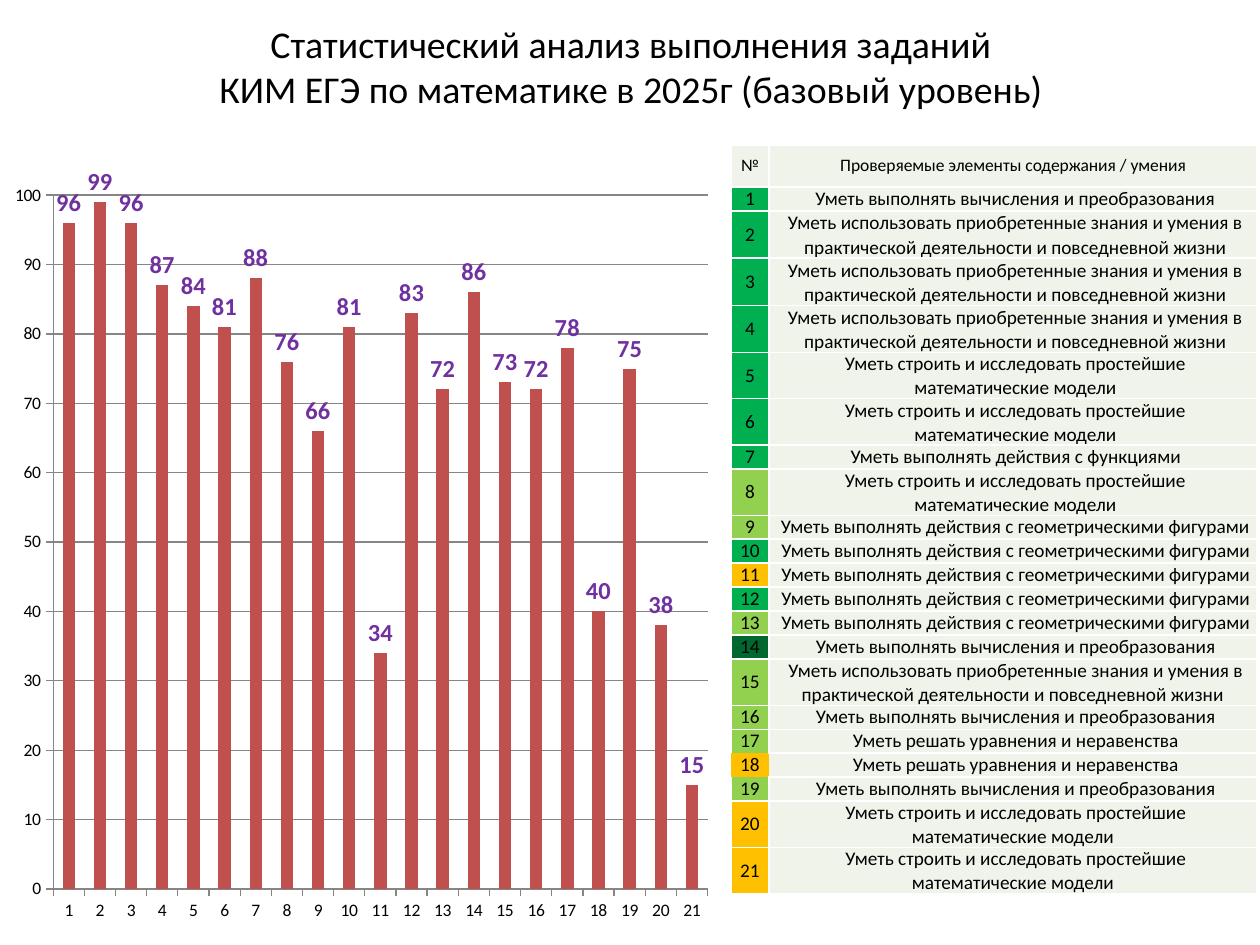
import pptx
import pptx.chart.data
import pptx.dml.color
import pptx.enum.chart
import pptx.enum.text
import pptx.oxml
import pptx.oxml.ns
import pptx.util

RGBColor = pptx.dml.color.RGBColor
Pt = pptx.util.Pt
CENTER = pptx.enum.text.PP_ALIGN.CENTER
MIDDLE = pptx.enum.text.MSO_ANCHOR.MIDDLE
TOP = pptx.enum.text.MSO_ANCHOR.TOP

PX_PER_INCH = 126
FONT = "Calibri"
BLACK = RGBColor(0x00, 0x00, 0x00)
WHITE = RGBColor(0xFF, 0xFF, 0xFF)
PALE = RGBColor(0xEF, 0xF3, 0xEA)
DARK_GREEN = RGBColor(0x00, 0x68, 0x2F)
GREEN = RGBColor(0x00, 0xB0, 0x50)
LIME = RGBColor(0x92, 0xD0, 0x50)
AMBER = RGBColor(0xFF, 0xC0, 0x00)
BAR_RED = RGBColor(0xC0, 0x50, 0x4D)
PURPLE = RGBColor(0x70, 0x30, 0xA0)
GRAY = RGBColor(0x86, 0x86, 0x86)

TITLE = ["Статистический анализ выполнения заданий",
         "КИМ ЕГЭ по математике в 2025г (базовый уровень)"]
HEADER = ["№", "Проверяемые элементы содержания / умения"]
CALC = "Уметь выполнять вычисления и преобразования"
PRACTICE = ("Уметь использовать приобретенные знания и умения в "
            "практической деятельности и повседневной жизни")
MODELS = "Уметь строить и исследовать простейшие математические модели"
FUNCTIONS = "Уметь выполнять действия с функциями"
GEOMETRY = "Уметь выполнять действия с геометрическими фигурами"
EQUATIONS = "Уметь решать уравнения и неравенства"

# skill, colour of the number cell, percentage of correct answers
TASKS = [
    (CALC, GREEN, 96), (PRACTICE, GREEN, 99), (PRACTICE, GREEN, 96),
    (PRACTICE, GREEN, 87), (MODELS, GREEN, 84), (MODELS, GREEN, 81),
    (FUNCTIONS, GREEN, 88), (MODELS, LIME, 76), (GEOMETRY, LIME, 66),
    (GEOMETRY, GREEN, 81), (GEOMETRY, AMBER, 34), (GEOMETRY, GREEN, 83),
    (GEOMETRY, LIME, 72), (CALC, DARK_GREEN, 86), (PRACTICE, LIME, 73),
    (CALC, LIME, 72), (EQUATIONS, LIME, 78), (EQUATIONS, AMBER, 40),
    (CALC, LIME, 75), (MODELS, AMBER, 38), (MODELS, AMBER, 15),
]
LEFT_MARGIN_TASKS = {1, 2, 3, 4, 5, 6, 8, 9}
LOOSE_TASKS = {2, 3, 4}
# sides without a border around the number cell of task 18
OPEN_SIDES = {(17, 0): "B", (18, 0): "LRTB", (18, 1): "L", (19, 0): "T"}


def px(n):
    return round(n * 914400 / PX_PER_INCH)


def style_font(font, size, color=BLACK, bold=False):
    font.name = FONT
    font.size = Pt(size)
    font.bold = bold
    font.color.rgb = color


def add_run(p, text, size):
    p.alignment = CENTER
    r = p.add_run()
    r.text = text
    style_font(r.font, size)


def add_title(slide):
    tf = slide.shapes.add_textbox(px(64), px(16), px(1134), px(100)).text_frame
    tf.word_wrap = True
    tf.vertical_anchor = MIDDLE
    for i, line in enumerate(TITLE):
        p = tf.add_paragraph() if i else tf.paragraphs[0]
        add_run(p, line, 21.6)


def set_borders(cell, open_sides):
    tc_pr = cell._tc.get_or_add_tcPr()
    ns = pptx.oxml.ns.nsdecls("a")
    for i, side in enumerate("LRTB"):
        if side in open_sides:
            xml = f'<a:ln{side} {ns} w="0"><a:noFill/></a:ln{side}>'
        else:
            xml = (f'<a:ln{side} {ns} w="12700"><a:solidFill><a:srgbClr val="{WHITE}"/>'
                   f'</a:solidFill></a:ln{side}>')
        tc_pr.insert(i, pptx.oxml.parse_xml(xml))


def fill_cell(cell, text, size, fill, anchor=MIDDLE, open_sides=""):
    """Write one table cell and return its paragraph."""
    cell.margin_left = cell.margin_right = px(5)
    cell.margin_top = cell.margin_bottom = 0
    cell.vertical_anchor = anchor
    cell.fill.solid()
    cell.fill.fore_color.rgb = fill
    set_borders(cell, open_sides)
    p = cell.text_frame.paragraphs[0]
    add_run(p, text, size)
    return p


def indent_skill(p, task):
    p_pr = p._p.get_or_add_pPr()
    in_margin = task in LEFT_MARGIN_TASKS
    p_pr.set("marL", str(px(5) if in_margin else 0))
    p_pr.set("indent", str(0 if in_margin else px(6)))
    if in_margin:
        p.space_before = Pt(0.1)
    if task in LOOSE_TASKS:
        p.line_spacing = 1.02


def add_skills_table(slide):
    frame = slide.shapes.add_table(len(TASKS) + 1, 2, px(731), px(145), px(526), px(751))
    table = frame.table
    table.first_row = table.horz_banding = False
    style = table._tbl.tblPr.find(pptx.oxml.ns.qn("a:tableStyleId"))
    style.text = "{2D5ABB26-0587-4C30-8999-92F81FD0307C}"
    for col, width in zip(table.columns, (38, 488)):
        col.width = px(width)
    for i, row in enumerate(table.rows):
        row.height = px(24 if i else 42)
    frame.height = px(751)

    for col, text in enumerate(HEADER):
        fill_cell(table.cell(0, col), text, 10, PALE)
    for task, (skill, color, _) in enumerate(TASKS, 1):
        fill_cell(table.cell(task, 0), str(task), 11, color,
                  open_sides=OPEN_SIDES.get((task, 0), ""))
        p = fill_cell(table.cell(task, 1), skill, 11, PALE, TOP,
                      OPEN_SIDES.get((task, 1), ""))
        indent_skill(p, task)


def set_plot_layout(chart, x, y, w, h):
    plot_area = chart._chartSpace.chart.plotArea
    for old in plot_area.findall(pptx.oxml.ns.qn("c:layout")):
        plot_area.remove(old)
    sizes = "".join(f'<c:{k} val="{v}"/>' for k, v in zip("xywh", (x, y, w, h)))
    plot_area.insert(0, pptx.oxml.parse_xml(
        f'<c:layout {pptx.oxml.ns.nsdecls("c")}><c:manualLayout>'
        '<c:layoutTarget val="inner"/><c:xMode val="edge"/><c:yMode val="edge"/>'
        f'{sizes}</c:manualLayout></c:layout>'))


def add_results_chart(slide):
    data = pptx.chart.data.CategoryChartData()
    data.categories = [str(n) for n in range(1, len(TASKS) + 1)]
    data.add_series("Series 1", [percent for _, _, percent in TASKS])
    chart = slide.shapes.add_chart(
        pptx.enum.chart.XL_CHART_TYPE.COLUMN_CLUSTERED,
        px(15), px(165), px(714), px(756), data).chart
    style_font(chart.font, 10)
    chart.has_legend = chart.has_title = False
    set_plot_layout(chart, 0.05, 0.04, 0.92, 0.92)

    for axis in (chart.category_axis, chart.value_axis):
        axis.major_tick_mark = pptx.enum.chart.XL_TICK_MARK.OUTSIDE
        axis.format.line.color.rgb = GRAY
    axis = chart.value_axis
    axis.minimum_scale, axis.maximum_scale, axis.major_unit = 0, 100, 10
    axis.major_gridlines.format.line.color.rgb = GRAY

    plot = chart.plots[0]
    plot.gap_width = 150
    plot.vary_by_categories = False
    series = plot.series[0]
    series.format.fill.solid()
    series.format.fill.fore_color.rgb = BAR_RED
    labels = series.data_labels
    labels.show_value = True
    labels.position = pptx.enum.chart.XL_LABEL_POSITION.OUTSIDE_END
    style_font(labels.font, 14, PURPLE, bold=True)


def main():
    prs = pptx.Presentation()
    prs.slide_width, prs.slide_height = px(1260), px(945)
    slide = prs.slides.add_slide(prs.slide_layouts[6])
    add_title(slide)
    add_skills_table(slide)
    add_results_chart(slide)
    prs.save("out.pptx")


if __name__ == "__main__":
    main()
